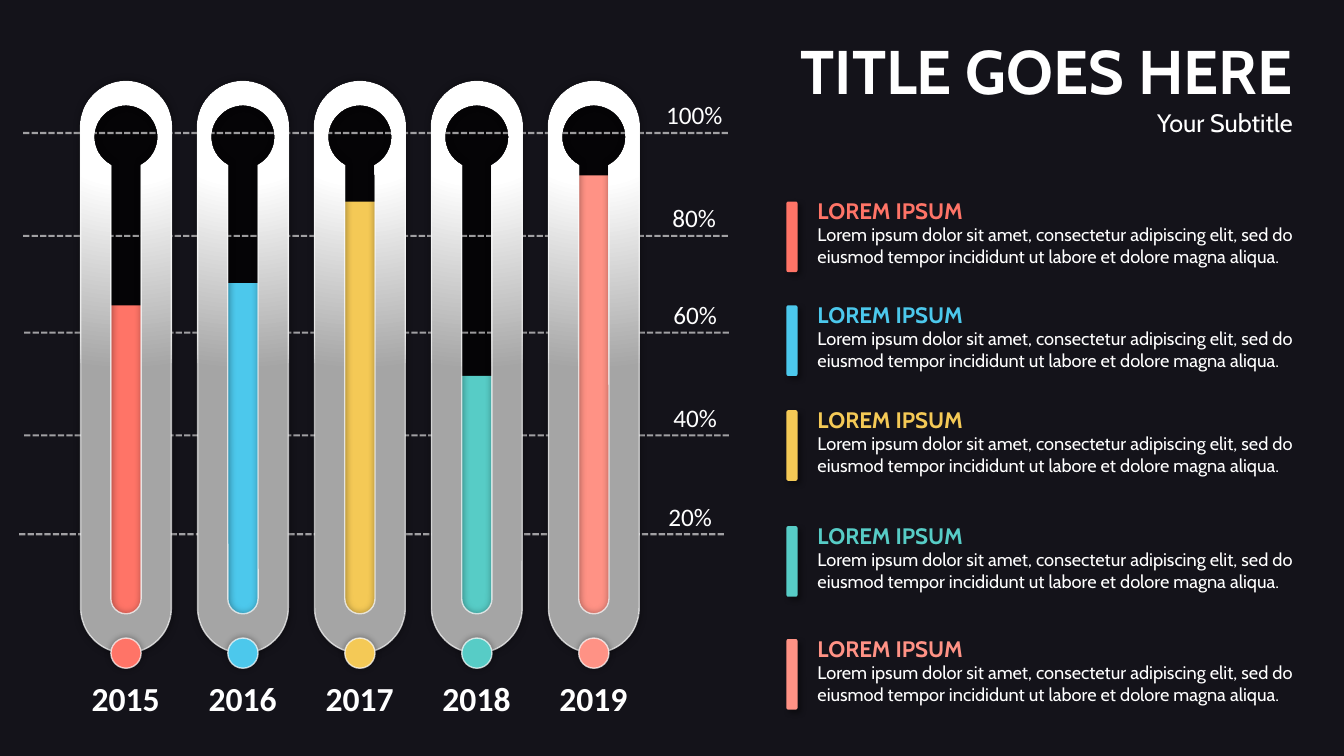
"""Builds a slide with five thermometer bars, a percentage scale and a legend."""
import math
from dataclasses import dataclass

from lxml import etree
from pptx import Presentation
from pptx import util as u
from pptx.dml.color import RGBColor
from pptx.enum import dml, shapes, text
from pptx.oxml import parse_xml
from pptx.oxml.ns import nsdecls, qn

TITLE, SUBTITLE = "TITLE GOES HERE", "Your Subtitle"
HEADING = "LOREM IPSUM"
BODY = ("Lorem ipsum dolor sit amet, consectetur adipiscing elit, sed do "
        "eiusmod tempor incididunt ut labore et dolore magna aliqua.")
# year, colour, top of the level, top of the legend entry
SERIES = [
    ("2015", "FF7467", 3.03, 2.0),
    ("2016", "4CC8EC", 2.81, 3.03),
    ("2017", "F4C956", 2.0, 4.07),
    ("2018", "57CCC6", 3.73, 5.22),
    ("2019", "FF9285", 1.74, 6.34),
]
SCALE = [("100%", 0.23, 1.32), ("80%", 0.23, 2.34), ("60%", 0.24, 3.3),
         ("40%", 0.24, 4.32), ("20%", 0.19, 5.3)]

TUBE_LEFT, TUBE_TOP, TUBE_WIDTH, TUBE_HEIGHT, TUBE_PITCH = 0.8, 0.81, 0.9, 5.67, 1.16
BULB_RADIUS, BULB_CENTRE = 0.32, 1.36
STEM_RADIUS, STEM_END = 0.15, 5.94
LEVEL_BOTTOM = 6.17


@dataclass(frozen=True)
class Theme:
    background: str = "14131A"
    white: str = "FFFFFF"
    black: str = "000000"
    metal: str = "A5A5A5"
    font: str = "Cabin"
    number_font: str = "Calibri"
    title: int = 44
    year: int = 24
    label: int = 18
    heading: int = 16
    body: int = 13


THEME = Theme()


def set_alpha(element, percent):
    for colour in element.iter(qn("a:srgbClr")):
        etree.SubElement(colour, qn("a:alpha")).set("val", str(percent * 1000))


def style(shape, colour, outlined=False, shadow=None):
    shape.fill.solid()
    shape.fill.fore_color.rgb = RGBColor.from_string(colour)
    if outlined:
        shape.line.color.rgb = RGBColor.from_string(THEME.white)
        shape.line.width = u.Pt(1)
        set_alpha(shape.line._ln, 70)
    else:
        shape.line.fill.background()
    shape.shadow.inherit = False
    if shadow:
        blur, distance, angle = shadow
        effects = shape._element.spPr.find(qn("a:effectLst"))
        effects.append(parse_xml(
            f'<a:outerShdw {nsdecls("a")} blurRad="{u.Pt(blur)}" dist="{u.Pt(distance)}" '
            f'dir="{angle * 60000}" algn="ctr" rotWithShape="0"><a:srgbClr val="{THEME.black}">'
            '<a:alpha val="40000"/></a:srgbClr></a:outerShdw>'))


def add_preset(slide, kind, box, colour, **options):
    shape = slide.shapes.add_shape(kind, *map(u.Inches, box))
    style(shape, colour, **options)
    return shape


def add_text(slide, box, lines, font, align=text.PP_ALIGN.LEFT):
    frame = slide.shapes.add_textbox(*map(u.Inches, box)).text_frame
    frame.word_wrap = True
    for index, (words, size, colour, bold) in enumerate(lines):
        paragraph = frame.add_paragraph() if index else frame.paragraphs[0]
        paragraph.text = words
        paragraph.alignment = align
        paragraph.font.name = font
        paragraph.font.size = u.Pt(size)
        paragraph.font.bold = bold
        paragraph.font.color.rgb = RGBColor.from_string(colour)


def add_arcs(outline, arcs):
    """Draws a closed contour of arcs joined by straight lines."""
    for index, (y, radius, start, sweep) in enumerate(arcs):
        angle = math.radians(start)
        step = etree.SubElement(outline, qn("a:lnTo" if index else "a:moveTo"))
        point = etree.SubElement(step, qn("a:pt"))
        point.set("x", str(u.Inches(TUBE_WIDTH / 2 + radius * math.cos(angle))))
        point.set("y", str(u.Inches(y - TUBE_TOP + radius * math.sin(angle))))
        arc = etree.SubElement(outline, qn("a:arcTo"))
        for name, value in (("wR", u.Inches(radius)), ("hR", u.Inches(radius)),
                            ("stAng", round(start * 60000)), ("swAng", round(sweep * 60000))):
            arc.set(name, str(value))
    etree.SubElement(outline, qn("a:close"))


def add_tube(slide, centre):
    radius = TUBE_WIDTH / 2
    left, top, right, bottom = map(u.Inches, (
        centre - radius, TUBE_TOP, centre + radius, TUBE_TOP + TUBE_HEIGHT))
    builder = slide.shapes.build_freeform(left, top)
    builder.add_line_segments([(right, top), (right, bottom), (left, bottom)], close=True)
    tube = builder.convert_to_shape()
    properties = tube._element.spPr
    outline = next(properties.iter(qn("a:path")))
    for step in list(outline):
        outline.remove(step)
    neck = math.degrees(math.acos(STEM_RADIUS / BULB_RADIUS))
    add_arcs(outline, [(TUBE_TOP + radius, radius, 180, 180),
                       (TUBE_TOP + TUBE_HEIGHT - radius, radius, 0, 180)])
    add_arcs(outline, [(BULB_CENTRE, BULB_RADIUS, 180 - neck, 180 + 2 * neck),
                       (STEM_END, STEM_RADIUS, 0, 180)])
    style(tube, THEME.white, outlined=True, shadow=(5, 0, 0))
    stops = "".join(f'<a:gs pos="{position * 1000}"><a:srgbClr val="{colour}"/></a:gs>'
                    for position, colour in ((0, THEME.white), (35, THEME.white), (100, THEME.metal)))
    properties.replace(properties.find(qn("a:solidFill")), parse_xml(
        f'<a:gradFill {nsdecls("a")} rotWithShape="1"><a:gsLst>{stops}</a:gsLst><a:path path="circle">'
        '<a:fillToRect l="50000" t="-80000" r="50000" b="180000"/></a:path></a:gradFill>'))


def add_scale_line(slide, label, left, y):
    line = slide.shapes.add_connector(
        shapes.MSO_CONNECTOR.STRAIGHT, *map(u.Inches, (left, y, left + 7, y)))
    line.line.color.rgb = RGBColor.from_string(THEME.white)
    line.line.width = u.Pt(1.5)
    line.line.dash_style = dml.MSO_LINE.SQUARE_DOT
    set_alpha(line.line._ln, 60)
    etree.SubElement(line._element.spPr, qn("a:effectLst"))
    add_text(slide, (left + 6.25, y - 0.38, 0.81, 0.4),
             [(label, THEME.label, THEME.white, False)], THEME.number_font, text.PP_ALIGN.CENTER)


def add_thermometer(slide, centre, year, colour, level):
    add_preset(slide, shapes.MSO_SHAPE.RECTANGLE,
               (centre - 0.35, level, 0.71, LEVEL_BOTTOM - level), colour)
    add_tube(slide, centre)
    add_preset(slide, shapes.MSO_SHAPE.OVAL, (centre - 0.15, 6.33, 0.3, 0.3), colour,
               outlined=True, shadow=(5, 0, 0))
    add_text(slide, (centre - 0.44, 6.68, 0.88, 0.5),
             [(year, THEME.year, THEME.white, True)], THEME.number_font)


def add_legend_entry(slide, colour, top):
    add_text(slide, (8.01, top + 0.17, 4.96, 0.76),
             [(BODY, THEME.body, THEME.white, False)], THEME.font)
    add_text(slide, (8.01, top - 0.09, 3.1, 0.37),
             [(HEADING, THEME.heading, colour, True)], THEME.font)
    add_preset(slide, shapes.MSO_SHAPE.ROUNDED_RECTANGLE, (7.8, top, 0.11, 0.7), colour,
               shadow=(4, 3, 45))


def main():
    presentation = Presentation()
    presentation.slide_width, presentation.slide_height = u.Inches(13.33), u.Inches(7.5)
    slide = presentation.slides.add_slide(presentation.slide_layouts[6])
    slide.background.fill.solid()
    slide.background.fill.fore_color.rgb = RGBColor.from_string(THEME.background)

    centres = [TUBE_LEFT + TUBE_WIDTH / 2 + TUBE_PITCH * index for index in range(len(SERIES))]
    for centre in centres:
        slot = add_preset(slide, shapes.MSO_SHAPE.ROUNDED_RECTANGLE,
                          (centre - 0.42, 0.91, 0.85, 5.33), THEME.black)
        slot.adjustments[0] = 0.5
        set_alpha(slot._element.spPr, 75)
    for entry in SCALE:
        add_scale_line(slide, *entry)
    for centre, (year, colour, level, _) in zip(centres, SERIES):
        add_thermometer(slide, centre, year, colour, level)
    add_text(slide, (6.9, 0.28, 6.02, 1.14),
             [(TITLE, THEME.title, THEME.white, True), (SUBTITLE, THEME.label, THEME.white, False)],
             THEME.font, text.PP_ALIGN.RIGHT)
    for _, colour, _, top in SERIES:
        add_legend_entry(slide, colour, top)
    presentation.save("out.pptx")


if __name__ == "__main__":
    main()
